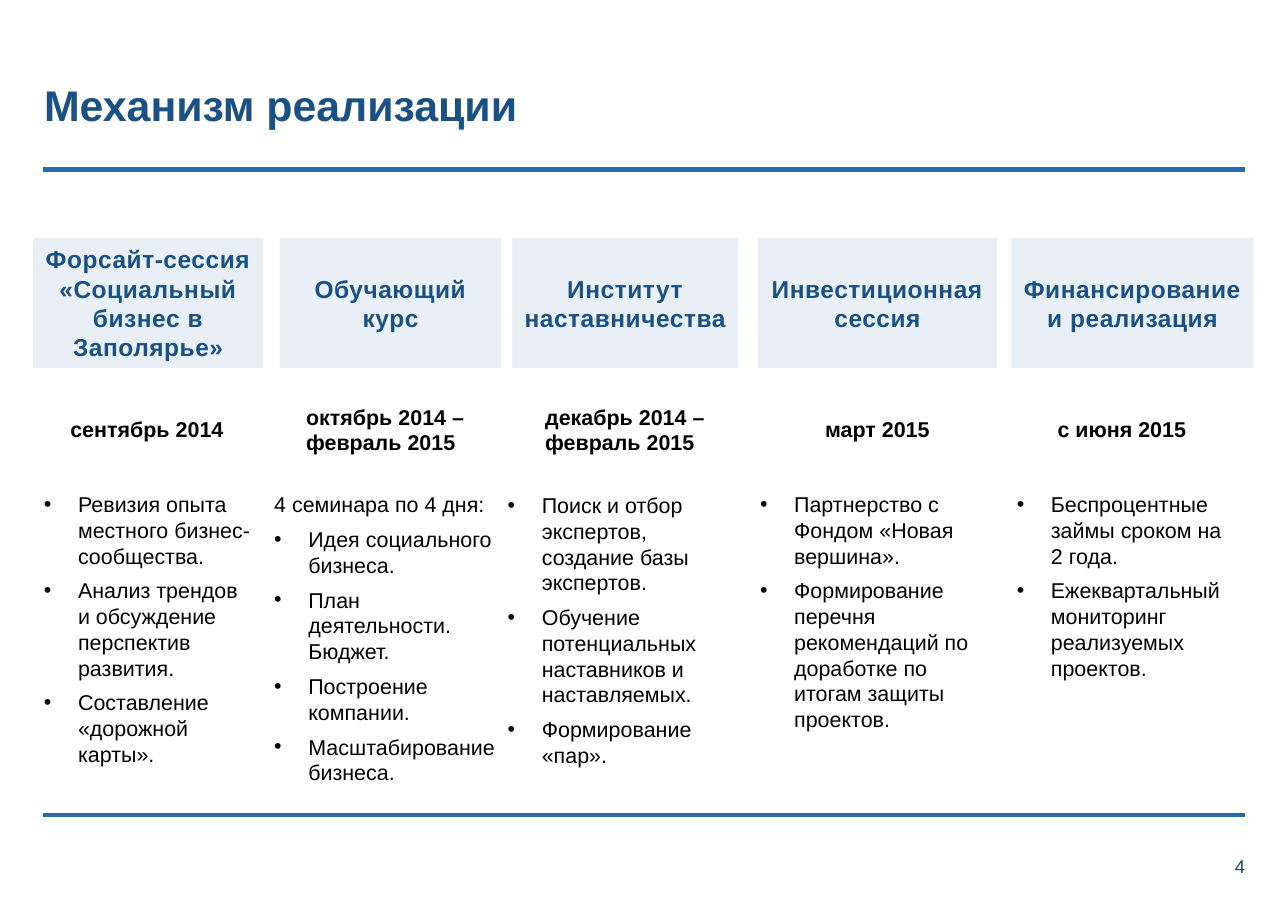
from lxml import etree
from pptx import Presentation
from pptx.dml import color
from pptx.enum import shapes, text
from pptx.oxml import ns
from pptx.util import Inches, Pt

BLUE, NAVY, PALE, BLACK = "236CB0", "1A5184", "E8EFF7", "000000"
TITLE = "Механизм реализации"
PAGE = "4"
RULES = [1.54, 7.4]
HEAD_TOP, HEAD_H = 2.16, 1.18
DATE_MID = 3.9
INDENT = 0.31

STAGES = [
    dict(head="Форсайт-сессия «Социальный бизнес в Заполярье»", head_at=(0.3, 2.09),
         date="сентябрь 2014", date_at=(0.54, 1.6),
         body_at=(0.3, 4.41, 2.09, 2.63), intro="",
         points=["Ревизия опыта местного бизнес-сообщества.",
                 "Анализ трендов и обсуждение перспектив развития.",
                 "Составление «дорожной карты»."]),
    dict(head="Обучающий курс", head_at=(2.54, 2.01),
         date="октябрь 2014 –\nфевраль 2015", date_at=(2.68, 1.64),
         body_at=(2.39, 4.41, 2.22, 3.03), intro="4 семинара по 4 дня:",
         points=["Идея социального бизнеса.", "План деятельности. Бюджет.",
                 "Построение компании.", "Масштабирование бизнеса."]),
    dict(head="Институт наставничества", head_at=(4.65, 2.05),
         date="декабрь 2014 –\nфевраль 2015", date_at=(4.85, 1.66),
         body_at=(4.51, 4.42, 2.34, 2.86), intro="",
         points=["Поиск и отбор экспертов, создание базы экспертов.",
                 "Обучение потенциальных наставников и наставляемых.",
                 "Формирование «пар»."]),
    dict(head="Инвестиционная сессия", head_at=(6.88, 2.17),
         date="март 2015", date_at=(7.39, 1.16),
         body_at=(6.8, 4.41, 2.34, 2.54), intro="",
         points=["Партнерство с Фондом «Новая вершина».",
                 "Формирование перечня рекомендаций по доработке по итогам защиты проектов."]),
    dict(head="Финансирование и реализация", head_at=(9.18, 2.2),
         date="с июня 2015", date_at=(9.5, 1.41),
         body_at=(9.13, 4.41, 2.15, 1.83), intro="",
         points=["Беспроцентные займы сроком на 2 года.",
                 "Ежеквартальный мониторинг реализуемых проектов."]),
]


def rgb(value):
    return color.RGBColor.from_string(value)


def write(sp, content, size, hue, bold=False, align=text.PP_ALIGN.LEFT,
          anchor=text.MSO_ANCHOR.TOP, wrap=True, inset=True):
    tf = sp.text_frame
    tf.text = content
    tf.word_wrap = wrap
    tf.vertical_anchor = anchor
    if not inset:
        tf.margin_left = tf.margin_top = tf.margin_right = tf.margin_bottom = 0
    for p in tf.paragraphs:
        p.alignment = align
        for r in p.runs:
            r.font.name, r.font.size, r.font.bold = "Arial", Pt(size), bold
            r.font.color.rgb = rgb(hue)
    return tf


def add_box(s, at):
    return s.shapes.add_textbox(*map(Inches, at))


def add_rule(s, y):
    line = s.shapes.add_connector(shapes.MSO_CONNECTOR.STRAIGHT,
                                  Inches(0.39), Inches(y), Inches(11.3), Inches(y))
    line.line.color.rgb = rgb(BLUE)
    line.line.width = Pt(3)
    etree.SubElement(line._element.spPr, ns.qn("a:effectLst"))


def add_head(s, stage):
    x, w = stage["head_at"]
    sp = s.shapes.add_shape(shapes.MSO_SHAPE.RECTANGLE, Inches(x), Inches(HEAD_TOP),
                            Inches(w), Inches(HEAD_H))
    sp.shadow.inherit = False
    sp.fill.solid()
    sp.fill.fore_color.rgb = rgb(PALE)
    sp.line.fill.background()
    tf = write(sp, stage["head"], 16, NAVY, True, text.PP_ALIGN.CENTER, text.MSO_ANCHOR.MIDDLE)
    tf.paragraphs[0].runs[0]._r.get_or_add_rPr().set("spc", "40")


def add_date(s, stage):
    x, w = stage["date_at"]
    h = 0.57 if "\n" in stage["date"] else 0.34
    write(add_box(s, (x, DATE_MID - h / 2, w, h)), stage["date"], 14, BLACK, True, wrap=False)


def add_body(s, stage):
    intro = [stage["intro"]] if stage["intro"] else []
    tf = write(add_box(s, stage["body_at"]), "\n".join(intro + stage["points"]), 14, BLACK)
    for i, p in enumerate(tf.paragraphs):
        p.space_before = Pt(6 if i else 0)
        if i >= len(intro):
            pPr = p._p.get_or_add_pPr()
            pPr.set("marL", str(Inches(INDENT)))
            pPr.set("indent", str(-Inches(INDENT)))
            etree.SubElement(pPr, ns.qn("a:buFont")).set("typeface", "Arial")
            etree.SubElement(pPr, ns.qn("a:buChar")).set("char", "•")


def main():
    prs = Presentation()
    prs.slide_width, prs.slide_height = Inches(11.69), Inches(8.27)
    s = prs.slides.add_slide(prs.slide_layouts[6])
    for y in RULES:
        add_rule(s, y)
    write(add_box(s, (10.51, 7.76, 0.79, 0.2)), PAGE, 12, "14446C",
          align=text.PP_ALIGN.RIGHT, anchor=text.MSO_ANCHOR.MIDDLE, inset=False)
    tf = write(add_box(s, (0.4, 0.63, 10.91, 0.55)), TITLE, 28, NAVY, True,
               anchor=text.MSO_ANCHOR.BOTTOM, inset=False)
    tf.paragraphs[0].line_spacing = Pt(28)
    for stage in STAGES:
        add_head(s, stage)
        add_date(s, stage)
        add_body(s, stage)
    prs.save("out.pptx")


if __name__ == "__main__":
    main()
